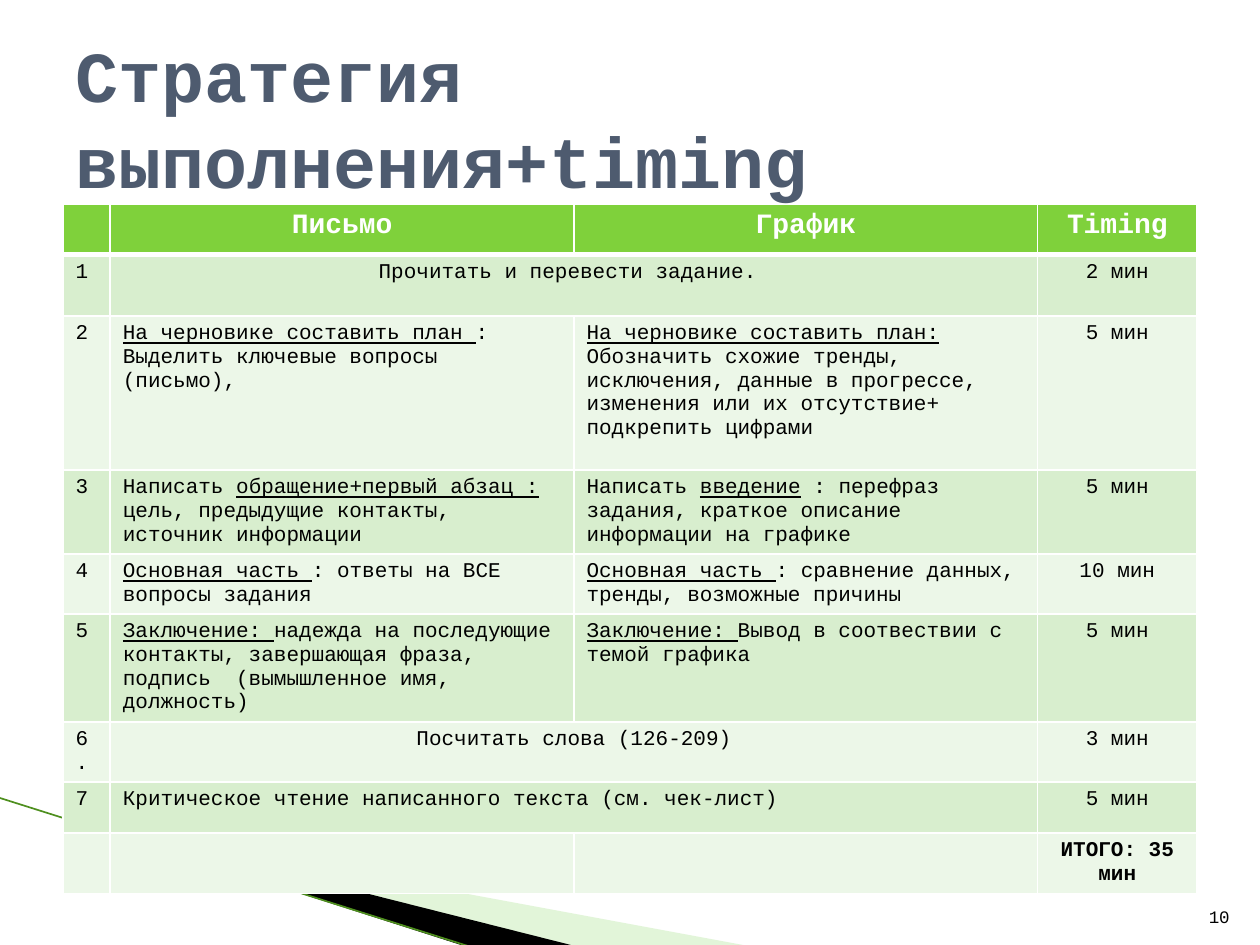
from lxml import etree
from pptx import Presentation
from pptx.dml.color import RGBColor
from pptx.enum import shapes, text
from pptx.oxml.ns import qn
from pptx.util import Pt

FONT = "Courier New"
WHITE, BLACK = "FFFFFF", "000000"
HEADER_GREEN, BANDS = "7FD13B", ("D8EECE", "ECF7E8")
PALE_GREEN, LINE_GREEN, TITLE_BLUE = "B8E7A1", "4E8F1E", "4E5B6F"
LEFT, CENTER, RIGHT = text.PP_ALIGN.LEFT, text.PP_ALIGN.CENTER, text.PP_ALIGN.RIGHT

COLUMN_WIDTHS = (27, 265, 265, 91)
ROW_HEIGHTS = (29, 35, 88, 48, 34.3, 61.7, 34.3, 29.2, 34.4)

# Underscores enclose underlined words; None continues the cell on its left.
STEPS = [
    ("", "Письмо", "График", "Timing"),
    ("1", "Прочитать и перевести задание. ", None, "2 мин"),
    ("2",
     "_На черновике составить план _:\nВыделить ключевые вопросы (письмо),",
     "_На черновике составить план:_\nОбозначить схожие тренды, исключения, данные в прогрессе, "
     "изменения или их отсутствие+ подкрепить цифрами",
     "5 мин"),
    ("3",
     "Написать _обращение+первый абзац : _цель, предыдущие контакты, источник информации",
     "Написать _введение_ : перефраз задания, краткое описание информации на графике",
     "5 мин"),
    ("4",
     "_Основная часть _: ответы на ВСЕ вопросы задания",
     "_Основная часть _: сравнение данных, тренды, возможные причины",
     "10 мин"),
    ("5",
     "_Заключение: _надежда на последующие контакты, завершающая фраза, "
     "подпись  (вымышленное имя,  должность)",
     "_Заключение: _Вывод в соотвествии с темой графика",
     "5 мин"),
    ("6.", "Посчитать слова (126-209)", None, "3 мин"),
    ("7", "Критическое чтение написанного текста (см. чек-лист)", None, "5 мин"),
    ("", "", "", "ИТОГО: 35 мин"),
]
CENTERED_STEPS = (0, 1, 6)


def rgb(color):
    return RGBColor.from_string(color)


def style_font(font, size, color, bold=False):
    font.name, font.size, font.bold = FONT, Pt(size), bold
    font.color.rgb = rgb(color)


def set_frame(wedge, frame):
    """Give the wedge another frame while its outline stays in place."""
    left, top, width, height = [Pt(v) for v in frame]
    shift_x, shift_y = wedge.left - left, wedge.top - top
    wedge.left, wedge.top, wedge.width, wedge.height = left, top, width, height
    outline = wedge._element.spPr.find(".//" + qn("a:pathLst"))[0]
    outline.set("w", str(width))
    outline.set("h", str(height))
    for point in outline.iter(qn("a:pt")):
        point.set("x", str(int(point.get("x")) + shift_x))
        point.set("y", str(int(point.get("y")) + shift_y))


def add_wedge(slide, points, frame, color, opacity=100):
    start, *others = [(Pt(x), Pt(y)) for x, y in points]
    builder = slide.shapes.build_freeform(*start, scale=1.0)
    builder.add_line_segments(others, close=True)
    wedge = builder.convert_to_shape()
    set_frame(wedge, frame)
    wedge.shadow.inherit = False
    wedge.line.fill.background()
    wedge.fill.solid()
    wedge.fill.fore_color.rgb = rgb(color)
    if opacity < 100:
        srgb = wedge._element.spPr.find(".//" + qn("a:srgbClr"))
        etree.SubElement(srgb, qn("a:alpha")).set("val", str(opacity * 1000))


def add_edge_line(slide, start, end, color, width):
    edge = slide.shapes.add_connector(
        shapes.MSO_CONNECTOR.STRAIGHT, *[Pt(v) for v in start + end])
    edge.line.color.rgb = rgb(color)
    edge.line.width = Pt(width)
    etree.SubElement(edge._element.spPr, qn("a:effectLst"))


def set_borders(cell, bottom_width):
    """Draw white borders; they must precede the fill in the cell properties."""
    properties = cell._tc.get_or_add_tcPr()
    widths = {"lnL": 1, "lnR": 1, "lnT": 1, "lnB": bottom_width}
    for position, (side, width) in enumerate(widths.items()):
        border = etree.Element(qn("a:" + side), w=str(Pt(width)))
        fill = etree.SubElement(border, qn("a:solidFill"))
        etree.SubElement(fill, qn("a:srgbClr")).set("val", WHITE)
        properties.insert(position, border)


def write_cell(cell, content, align, size, color, bold):
    """Write one paragraph per line and underline the marked words."""
    for number, line in enumerate(content.split("\n")):
        frame = cell.text_frame
        paragraph = frame.add_paragraph() if number else frame.paragraphs[0]
        paragraph.alignment = align
        style_font(paragraph.font, size, color, bold)
        for index, words in enumerate(line.split("_")):
            if words:
                run = paragraph.add_run()
                run.text = words
                style_font(run.font, size, color, bold)
                run.font.underline = index % 2 == 1


def add_strategy_table(slide):
    table = slide.shapes.add_table(
        len(STEPS), len(COLUMN_WIDTHS), Pt(36), Pt(116.6),
        Pt(sum(COLUMN_WIDTHS)), Pt(sum(ROW_HEIGHTS))).table
    table.horz_banding = False
    for column, width in zip(table.columns, COLUMN_WIDTHS):
        column.width = Pt(width)
    for r, step in enumerate(STEPS):
        table.rows[r].height = Pt(ROW_HEIGHTS[r])
        header, total = r == 0, r == len(STEPS) - 1
        for c, content in enumerate(step):
            cell = table.cell(r, c)
            cell.fill.solid()
            cell.fill.fore_color.rgb = rgb(HEADER_GREEN if header else BANDS[(r - 1) % 2])
            set_borders(cell, 3 if header else 1)
            if content is None:
                table.cell(r, c - 1).merge(cell)
                continue
            centered = c == 3 or (c > 0 and r in CENTERED_STEPS)
            write_cell(cell, content, CENTER if centered else LEFT,
                       16 if header else 12, WHITE if header else BLACK, header or total)


def add_page_number(slide, number):
    box = slide.shapes.add_textbox(Pt(681), Pt(504.5), Pt(28.8), Pt(28.8))
    frame = box.text_frame
    frame.word_wrap = True
    frame.vertical_anchor = text.MSO_ANCHOR.BOTTOM
    frame.text = number
    frame.paragraphs[0].alignment = RIGHT
    style_font(frame.paragraphs[0].runs[0].font, 10, BLACK)


def set_title(slide, wording):
    title = slide.shapes.title
    title.left, title.top, title.width, title.height = Pt(36), Pt(21.6), Pt(648), Pt(90)
    frame = title.text_frame
    frame.text = wording
    frame.word_wrap = True
    frame.auto_size = text.MSO_AUTO_SIZE.NONE
    frame.vertical_anchor = text.MSO_ANCHOR.MIDDLE
    frame.paragraphs[0].alignment = LEFT
    style_font(frame.paragraphs[0].runs[0].font, 41, TITLE_BLUE, True)
    slide.shapes._spTree.append(title._element)  # in front of the table


def main():
    deck = Presentation()
    deck.slide_width, deck.slide_height = Pt(720), Pt(540)
    slide = deck.slides.add_slide(deck.slide_layouts[5])
    add_wedge(slide, [(39.6, 468.7), (428.4, 540.7), (328.3, 540.7), (39.6, 468)],
              (56.2, 393.8, 299.5, 113.8), PALE_GREEN, opacity=40)
    add_wedge(slide, [(38.2, 467.3), (329, 540.7), (267.8, 541.4), (38.9, 468)],
              (-4.3, 455.8, 299.5, 66.2), BLACK)
    add_edge_line(slide, (-0.7, 455.8), (270, 541.4), LINE_GREEN, 0.95)
    add_strategy_table(slide)
    add_page_number(slide, "10")
    set_title(slide, "Стратегия выполнения+timing")
    deck.save("out.pptx")


if __name__ == "__main__":
    main()
